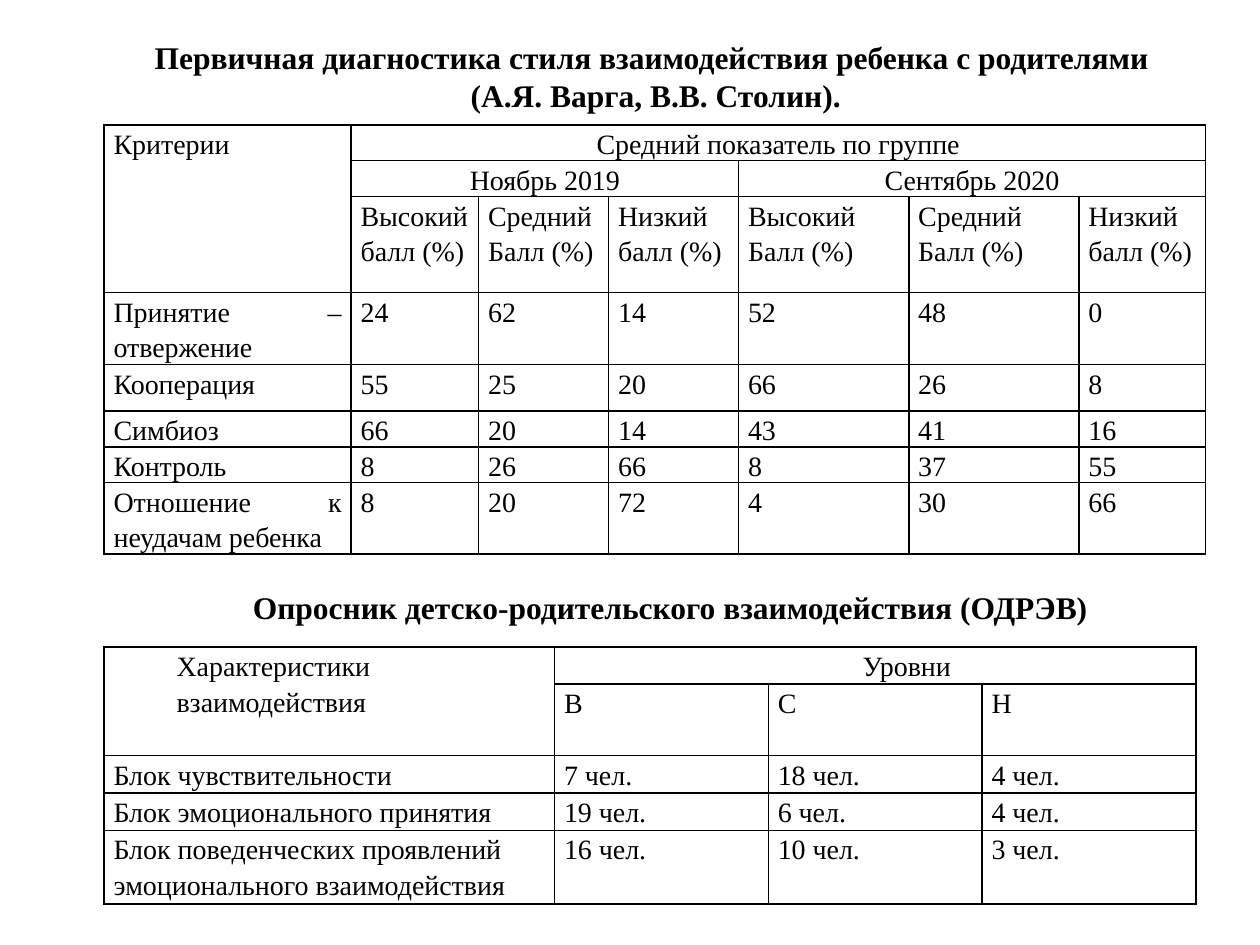
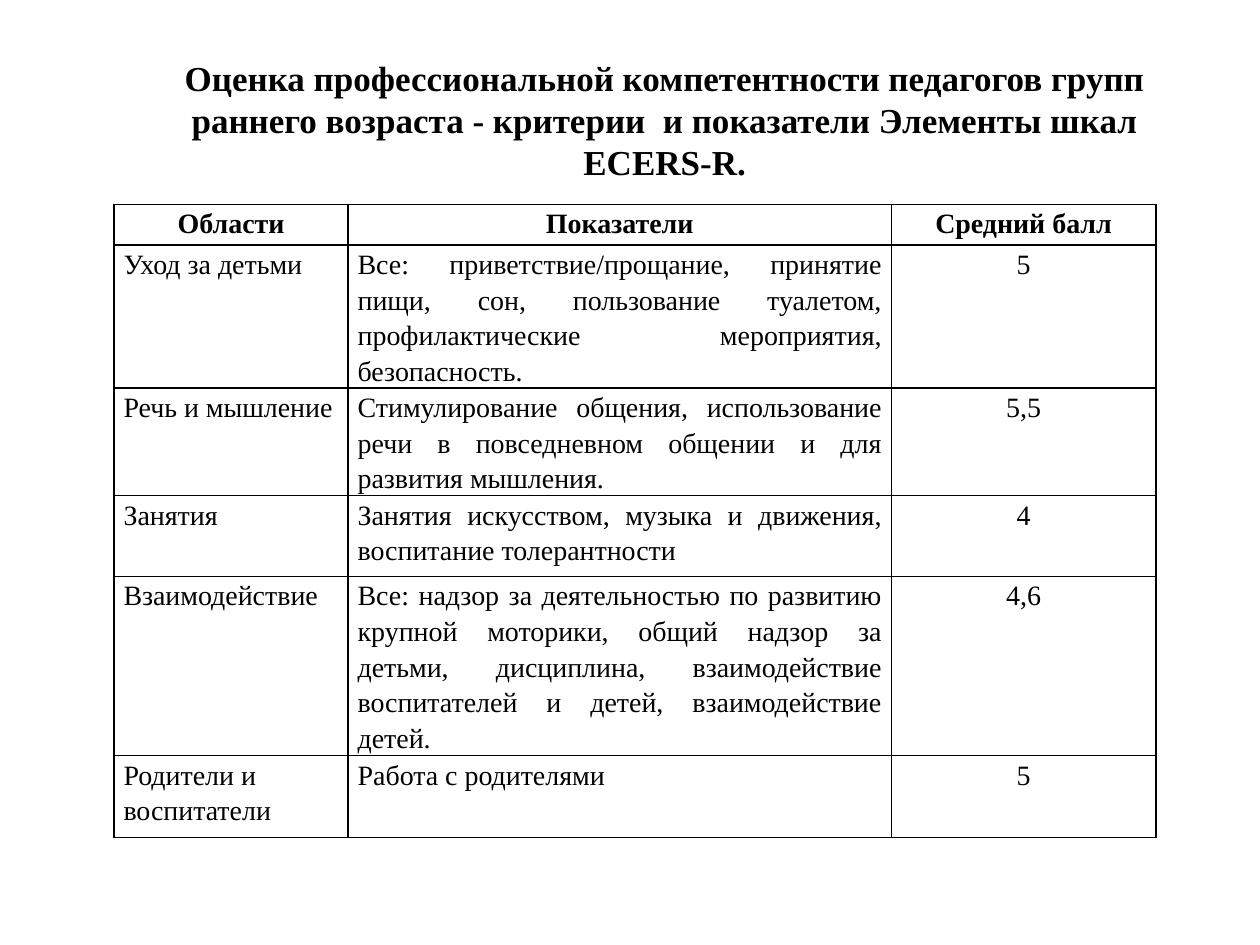
"""Build two slides of diagnostic results: parent-child interaction and teacher competence."""
from lxml import etree
from pptx import Presentation
from pptx.dml.color import RGBColor
from pptx.enum.text import MSO_ANCHOR, PP_ALIGN
from pptx.oxml.ns import qn
from pptx.util import Cm, Pt

LEFT, CENTER, JUSTIFY = PP_ALIGN.LEFT, PP_ALIGN.CENTER, PP_ALIGN.JUSTIFY
MIDDLE = MSO_ANCHOR.MIDDLE
COLORS = {"text": "000000", "border": "000000"}
FONT = "Times New Roman"
BORDER_WIDTH = Pt(1)
CELL_SIZE, CELL_SPACING = 16, Pt(20.4)
TITLE_SPACING = 1.0


def write(frame, text, size, align, bold, spacing):
    """Put text into a frame and format every paragraph alike."""
    frame.text = text
    frame.word_wrap = True
    for para in frame.paragraphs:
        para.alignment = align
        para.line_spacing = spacing
        for span in para.runs:
            span.font.name = FONT
            span.font.size = Pt(size)
            span.font.bold = bold
            span.font.color.rgb = RGBColor.from_string(COLORS["text"])


def add_grid(page, left, top, widths, heights, rows, aligns, merges=(), header_rows=1, bold_header=False):
    """Add a bordered table; merges hold first row, first column, last row, last column."""
    frame = page.shapes.add_table(len(heights), len(widths), Cm(left), Cm(top),
                                  Cm(sum(widths)), Cm(sum(heights)))
    table = frame.table
    table.first_row = table.horz_banding = False
    for column, width in zip(table.columns, widths):
        column.width = Cm(width)
    for row, height in zip(table.rows, heights):
        row.height = Cm(height)
    for row_index, row in enumerate(rows):
        for column_index, text in enumerate(row):
            cell = table.cell(row_index, column_index)
            cell.margin_left = cell.margin_right = Cm(0.19)
            cell.margin_top = cell.margin_bottom = 0
            cell.fill.background()
            properties = cell._tc.get_or_add_tcPr()
            for position, side in enumerate(("a:lnL", "a:lnR", "a:lnT", "a:lnB")):
                line = etree.Element(qn(side), w=str(BORDER_WIDTH))
                fill = etree.SubElement(line, qn("a:solidFill"))
                etree.SubElement(fill, qn("a:srgbClr"), val=COLORS["border"])
                properties.insert(position, line)
            if text:
                bold = bold_header and row_index < header_rows
                align = CENTER if bold else aligns[column_index]
                write(cell.text_frame, text, CELL_SIZE, align, bold, CELL_SPACING)
            else:
                cell.text_frame.paragraphs[0].font.size = Pt(CELL_SIZE)
                cell.text_frame.paragraphs[0].line_spacing = CELL_SPACING
    for first_row, first_column, last_row, last_column in merges:
        origin = table.cell(first_row, first_column)
        origin.merge(table.cell(last_row, last_column))
        if last_column > first_column:
            origin.text_frame.paragraphs[0].alignment = CENTER
    return table


deck = Presentation()
deck.slide_width, deck.slide_height = Cm(25.4), Cm(19.05)
blank = deck.slide_layouts[6]
interaction_page = deck.slides.add_slide(blank)
competence_page = deck.slides.add_slide(blank)

titles = [
    (interaction_page, (2.31, 0.76, 21.82, 1.55), 18, 0,
     "Первичная диагностика стиля взаимодействия ребенка с родителями \v(А.Я. Варга, В.В. Столин)."),
    (interaction_page, (3.1, 11.71, 19.58, 1.07), 18, 1.25,
     "Опросник детско-родительского взаимодействия (ОДРЭВ)"),
    (competence_page, (2.5, 0.99, 21.8, 2.82), 20, 0,
     "Оценка профессиональной компетентности педагогов групп раннего возраста - "
     "критерии  и показатели Элементы шкал ECERS-R."),
]
for page, place, size, indent, text in titles:
    box = page.shapes.add_textbox(*[Cm(length) for length in place])
    box.text_frame.vertical_anchor = MIDDLE
    write(box.text_frame, text, size, CENTER, True, TITLE_SPACING)
    if indent:
        box.text_frame.paragraphs[0]._p.get_or_add_pPr().set("indent", str(Cm(indent)))

style_rows = [
    ["Критерии", "Средний показатель по группе", "", "", "", "", ""],
    ["", "Ноябрь 2019", "", "", "Сентябрь 2020", "", ""],
    ["", "Высокий балл (%)", "Средний\nБалл (%)", "Низкий балл (%)",
     "Высокий\nБалл (%)", "Средний\nБалл (%)", "Низкий балл (%)"],
    ["Принятие – отвержение", "24", "62", "14", "52", "48", "0"],
    ["Кооперация", "55", "25", "20", "66", "26", "8"],
    ["Симбиоз", "66", "20", "14", "43", "41", "16"],
    ["Контроль", "8", "26", "66", "8", "37", "55"],
    ["Отношение к неудачам ребенка", "8", "20", "72", "4", "30", "66"],
]
add_grid(interaction_page, 2.1, 2.52,
         [4.98, 2.57, 2.62, 2.62, 3.43, 3.43, 2.55],
         [0.72, 0.72, 1.94, 1.45, 0.94, 0.72, 0.72, 1.44],
         style_rows, [JUSTIFY] * 7,
         merges=[(0, 0, 2, 0), (0, 1, 0, 6), (1, 1, 1, 3), (1, 4, 1, 6)])

level_rows = [
    ["Характеристики взаимодействия", "Уровни", "", ""],
    ["", "В", "С", "Н"],
    ["Блок чувствительности", "7 чел.", "18 чел.", "4 чел."],
    ["Блок эмоционального принятия", "19 чел.", "6 чел.", "4 чел."],
    ["Блок поведенческих проявлений эмоционального взаимодействия", "16 чел.", "10 чел.", "3 чел."],
]
levels = add_grid(interaction_page, 2.1, 13.04,
                  [9.08, 4.31, 4.31, 4.31], [0.75, 1.44, 0.76, 0.75, 1.48],
                  level_rows, [LEFT] * 4, merges=[(0, 0, 1, 0), (0, 1, 0, 3)])
for column_index in range(2):
    para = levels.cell(0, column_index).text_frame.paragraphs[0]
    para._p.get_or_add_pPr().set("marL", str(Cm(1.27)))

competence_rows = [
    ["Области", "Показатели", "Средний балл"],
    ["Уход за детьми",
     "Все: приветствие/прощание, принятие пищи, сон, пользование туалетом, "
     "профилактические мероприятия, безопасность.", "5"],
    ["Речь и мышление",
     "Стимулирование общения, использование речи в повседневном общении и для развития мышления.", "5,5"],
    ["Занятия", "Занятия искусством, музыка и движения, воспитание толерантности", "4"],
    ["Взаимодействие",
     "Все: надзор за деятельностью по развитию крупной моторики, общий надзор за детьми, "
     "дисциплина, взаимодействие воспитателей и детей, взаимодействие детей.", "4,6"],
    ["Родители и воспитатели", "Работа с родителями", "5"],
]
add_grid(competence_page, 2.3, 4.12, [4.72, 10.95, 5.33],
         [0.82, 2.88, 2.17, 1.63, 3.61, 1.65],
         competence_rows, [LEFT, JUSTIFY, CENTER], bold_header=True)

deck.save("out.pptx")
